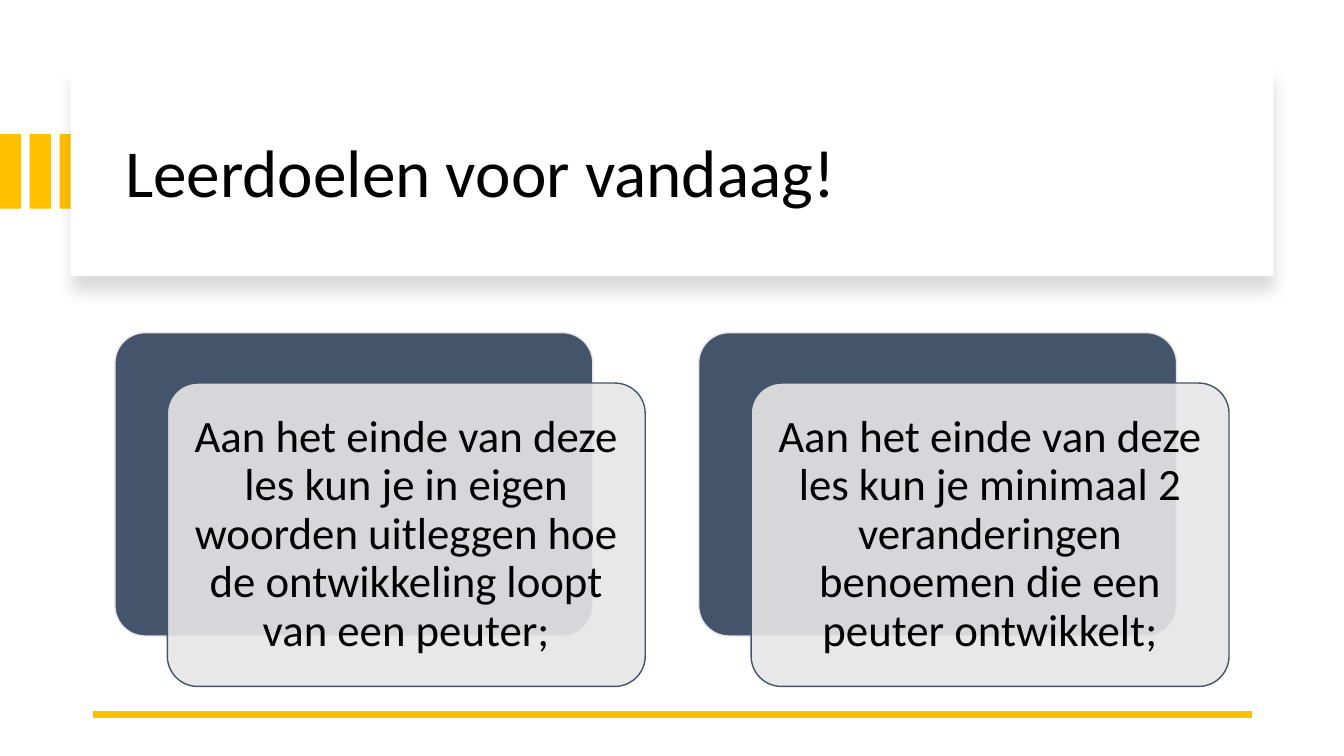
from lxml import etree
from pptx import Presentation
from pptx.dml.color import RGBColor
from pptx.enum.shapes import MSO_CONNECTOR, MSO_SHAPE
from pptx.enum.text import MSO_ANCHOR, MSO_AUTO_SIZE, PP_ALIGN
from pptx.oxml import parse_xml
from pptx.oxml.ns import nsdecls, qn
from pptx.util import Inches, Pt

RECT, ROUNDED = MSO_SHAPE.RECTANGLE, MSO_SHAPE.ROUNDED_RECTANGLE
STRAIGHT = MSO_CONNECTOR.STRAIGHT
MIDDLE, NO_FIT = MSO_ANCHOR.MIDDLE, MSO_AUTO_SIZE.NONE
LEFT, CENTER = PP_ALIGN.LEFT, PP_ALIGN.CENTER

COLORS = {"accent": "FFC000", "navy": "44546A", "pale": "E7E6E6",
          "white": "FFFFFF", "text": "000000"}
FONT = "Calibri"
SLIDE_W, SLIDE_H = 13.33, 7.5
MARGIN = 1.14

# Stripes at the left edge
STRIPE_COUNT, STRIPE_STEP = 3, 0.295
STRIPE_TOP, STRIPE_W, STRIPE_H = 1.33, 0.21, 0.74

# Cards: one column per goal, with the front panel shifted from the back one
CARD_TOP, CARD_W, CARD_H, CARD_STEP = 3.3, 4.74, 3.01, 5.79
SHIFT_X, SHIFT_Y, TEXT_INSET = 0.52, 0.5, 0.09

TITLE = "Leerdoelen voor vandaag!"
GOALS = [
    "Aan het einde van deze les kun je in eigen woorden uitleggen hoe "
    "de ontwikkeling loopt van een peuter;",
    "Aan het einde van deze les kun je minimaal 2 veranderingen benoemen "
    "die een peuter ontwikkelt;",
]


def rgb(name):
    return RGBColor.from_string(COLORS[name])


def box(*lengths):
    return [Inches(length) for length in lengths]


def apply_format(target, values):
    for attribute, value in values.items():
        setattr(target, attribute, value)


def add_panel(slide, kind, bounds, fill, outline=None):
    panel = slide.shapes.add_shape(kind, *box(*bounds))
    panel.shadow.inherit = False
    panel.fill.solid()
    panel.fill.fore_color.rgb = rgb(fill)
    if outline:
        panel.line.color.rgb = rgb(outline)
        panel.line.width = Pt(1)
    else:
        panel.line.fill.background()
    if kind == ROUNDED:
        panel.adjustments[0] = 0.1
    return panel


def set_opacity(panel, percent):
    color = panel.fill._xPr.find(qn("a:solidFill"))[0]
    etree.SubElement(color, qn("a:alpha"), val=str(percent * 1000))


def add_drop_shadow(panel):
    effects = panel._element.spPr.find(qn("a:effectLst"))
    effects.append(parse_xml(
        f'<a:outerShdw {nsdecls("a")} blurRad="{Pt(11)}" dist="{Pt(10)}" '
        f'dir="5400000" algn="t" rotWithShape="0">'
        f'<a:srgbClr val="{COLORS["text"]}"><a:alpha val="15000"/></a:srgbClr>'
        f'</a:outerShdw>'))


def write_text(frame, text, size, align, **frame_format):
    apply_format(frame, {"word_wrap": True, "auto_size": NO_FIT,
                         "vertical_anchor": MIDDLE, **frame_format})
    paragraph = frame.paragraphs[0]
    paragraph.text = text
    apply_format(paragraph, {"alignment": align, "line_spacing": 0.9})
    font = paragraph.runs[0].font
    apply_format(font, {"name": FONT, "size": Pt(size)})
    font.color.rgb = rgb("text")


def add_header(slide):
    for i in range(STRIPE_COUNT):
        add_panel(slide, RECT, (i * STRIPE_STEP, STRIPE_TOP, STRIPE_W, STRIPE_H),
                  "accent")
    banner = add_panel(slide, RECT, (0.7, 0.67, 11.93, 2.07), "white")
    add_drop_shadow(banner)

    # The title goes in front of the banner
    title = slide.shapes.title
    banner._element.addnext(title._element)
    bounds = box(MARGIN, 0.89, 11.13, 1.7)
    apply_format(title, dict(zip(("left", "top", "width", "height"), bounds)))
    write_text(title.text_frame, TITLE, 48, LEFT)


def add_rule(slide):
    rule = slide.shapes.add_connector(STRAIGHT, *box(12.42, 7.09, 0.92, 7.09))
    rule.line.color.rgb = rgb("accent")
    rule.line.width = Pt(4.5)
    etree.SubElement(rule._element.spPr, qn("a:effectLst"))


def add_goal_card(slide, column, goal):
    left = MARGIN + column * CARD_STEP
    add_panel(slide, ROUNDED, (left, CARD_TOP, CARD_W, CARD_H), "navy", "pale")

    front_left, front_top = left + SHIFT_X, CARD_TOP + SHIFT_Y
    front = add_panel(slide, ROUNDED, (front_left, front_top, CARD_W, CARD_H),
                      "pale", "navy")
    set_opacity(front, 90)

    goal_box = slide.shapes.add_textbox(*box(
        front_left + TEXT_INSET, front_top + TEXT_INSET,
        CARD_W - 2 * TEXT_INSET, CARD_H - 2 * TEXT_INSET))
    sides = ("left", "top", "right", "bottom")
    margins = {f"margin_{side}": Inches(0.13) for side in sides}
    write_text(goal_box.text_frame, goal, 32, CENTER, **margins)


def main():
    deck = Presentation()
    deck.slide_width, deck.slide_height = box(SLIDE_W, SLIDE_H)
    slide = deck.slides.add_slide(deck.slide_layouts[5])

    add_header(slide)
    add_rule(slide)
    for column, goal in enumerate(GOALS):
        add_goal_card(slide, column, goal)

    deck.save("out.pptx")


if __name__ == "__main__":
    main()
